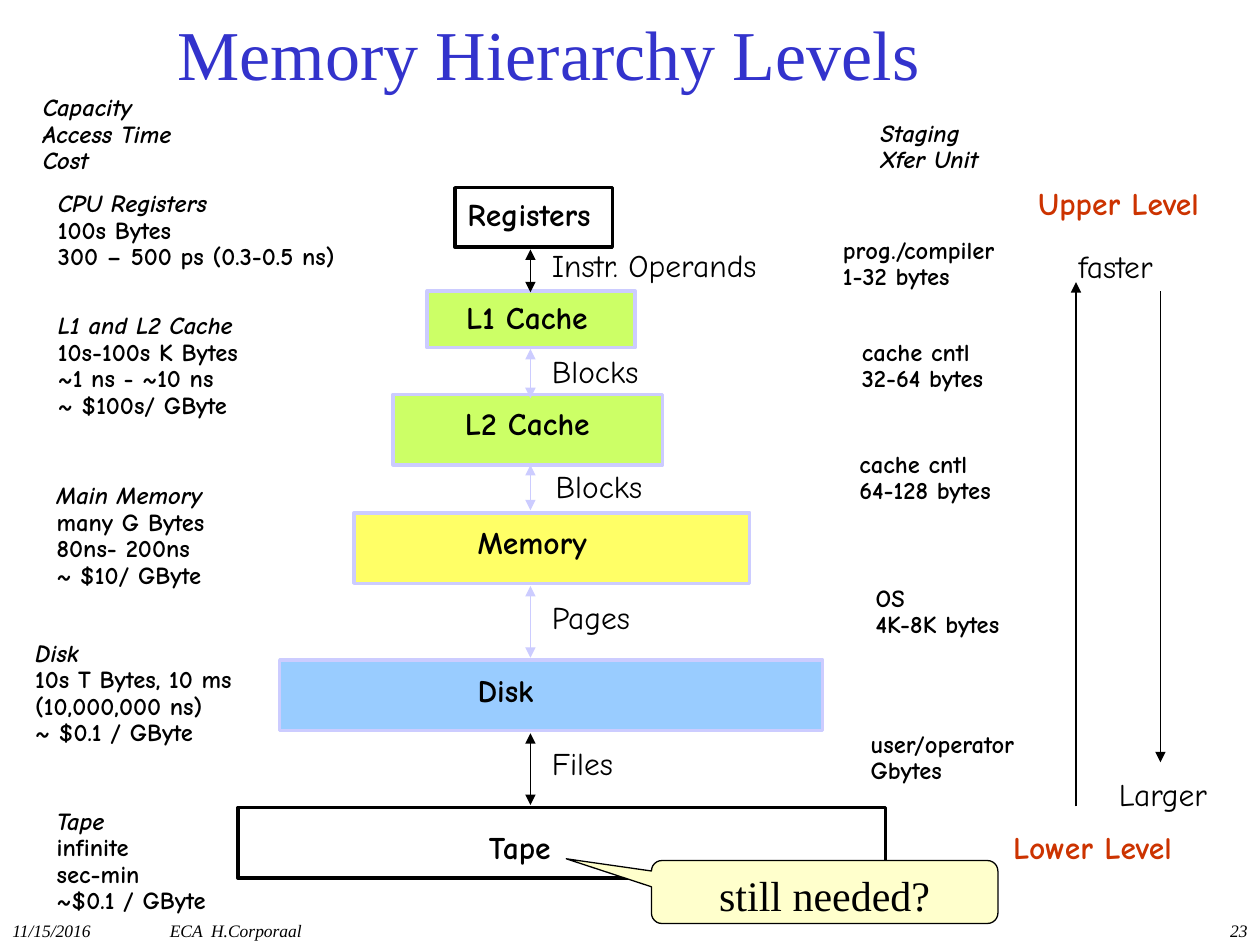
from lxml import etree
from pptx import Presentation
from pptx.dml.color import RGBColor
from pptx.enum.shapes import MSO_CONNECTOR, MSO_SHAPE
from pptx.enum.text import MSO_ANCHOR, MSO_AUTO_SIZE, PP_ALIGN
from pptx.oxml.ns import qn
from pptx.util import Inches, Pt

LEFT, CENTER, RIGHT = PP_ALIGN.LEFT, PP_ALIGN.CENTER, PP_ALIGN.RIGHT
MIDDLE = MSO_ANCHOR.MIDDLE
FIT_SHAPE = MSO_AUTO_SIZE.SHAPE_TO_FIT_TEXT
STRAIGHT = MSO_CONNECTOR.STRAIGHT
RECTANGLE = MSO_SHAPE.RECTANGLE
CALLOUT = MSO_SHAPE.ROUNDED_RECTANGULAR_CALLOUT

COMIC, TIMES = "Comic Neue", "Times New Roman"
BLACK, LILAC, RED, GREEN = "000000", "CCCCFF", "CC3300", "CCFF66"
AXIS_X = 4.21

# left, top, width, height, fill, outline
LEVEL_BOXES = [
    (3.61, 1.49, 1.25, 0.47, None, BLACK),
    (3.39, 2.31, 1.65, 0.45, GREEN, LILAC),
    (3.12, 3.13, 2.14, 0.56, GREEN, LILAC),
    (2.81, 4.07, 3.14, 0.56, "FFFF66", LILAC),
    (2.22, 5.24, 4.31, 0.56, "99CCFF", LILAC),
    (1.89, 6.41, 5.14, 0.56, None, BLACK),
]
# left, top, width, text
LEVEL_NAMES = [
    (3.64, 1.56, 1.26, "Registers"),
    (3.63, 2.38, 1.24, "L1 Cache"),
    (3.62, 3.22, 1.24, "L2 Cache"),
    (3.72, 4.17, 1.08, "Memory"),
    (3.72, 5.34, 0.65, "Disk"),
    (3.81, 6.59, 0.83, "Tape"),
]
TRANSFER_NAMES = [
    (4.31, 1.97, 2.02, "Instr. Operands"),
    (4.31, 2.81, 0.88, "Blocks"),
    (4.34, 3.72, 0.88, "Blocks"),
    (4.31, 4.76, 0.79, "Pages"),
    (4.31, 5.92, 0.69, "Files"),
]
TREND_NAMES = [(8.49, 1.98, 0.89, "faster"), (8.81, 6.17, 0.91, "Larger")]
END_NAMES = [(8.17, 1.48, 1.57, "Upper Level"), (7.97, 6.59, 1.55, "Lower Level")]
# top, bottom, colour
TRANSFER_ARROWS = [
    (1.98, 2.32, BLACK),
    (2.77, 3.16, LILAC),
    (3.69, 4.05, LILAC),
    (4.65, 5.22, LILAC),
    (5.82, 6.39, BLACK),
]
# left, top, width, height, lines, number of italic lines
NOTES = [
    (0.27, 0.73, 2.25, 0.69, ["Capacity", "Access Time", "Cost"], 3),
    (0.39, 1.49, 2.66, 0.69,
     ["CPU Registers", "100s Bytes", "300 – 500 ps (0.3-0.5 ns)"], 1),
    (0.39, 2.46, 1.85, 0.9,
     ["L1 and L2 Cache", "10s-100s K Bytes", "~1 ns - ~10 ns", "~ $100s/ GByte"], 1),
    (0.38, 3.81, 1.46, 0.9,
     ["Main Memory", "many G Bytes", "80ns- 200ns", "~ $10/ GByte"], 1),
    (0.21, 5.06, 2.13, 0.9,
     ["Disk", "10s T Bytes, 10 ms \v(10,000,000 ns)", "~ $0.1 / GByte"], 1),
    (0.38, 6.39, 1.55, 1.11, ["Tape", "infinite", "sec-min", "~$0.1 / GByte"], 1),
    (6.92, 0.93, 1.06, 0.48, ["Staging", "Xfer Unit"], 2),
    (6.62, 1.86, 1.51, 0.48, ["prog./compiler", "1-32 bytes"], 0),
    (6.77, 2.67, 1.34, 0.48, ["cache cntl", "32-64 bytes"], 0),
    (6.75, 3.56, 1.45, 0.48, ["cache cntl", "64-128 bytes"], 0),
    (6.88, 4.62, 1.34, 0.48, ["OS", "4K-8K bytes"], 0),
    (6.84, 5.78, 1.44, 0.48, ["user/operator", "Gbytes"], 0),
]
FOOTERS = [
    (0, 1.25, "11/15/2016", LEFT),
    (1.25, 3.17, "ECA  H.Corporaal", LEFT),
    (7.92, 2.08, "23", RIGHT),
]


def rgb(colour):
    return RGBColor.from_string(colour)


def style(para, name, size, colour, bold=False, italic=False):
    font = para.font
    font.name, font.size, font.bold, font.italic = name, Pt(size), bold, italic
    font.color.rgb = rgb(colour)


def add_text_box(page, left, top, width, height):
    box = page.shapes.add_textbox(*map(Inches, (left, top, width, height)))
    box.text_frame.word_wrap = True
    return box.text_frame


def add_tight_box(page, left, top, width, height):
    """Text frame with narrow margins that grows with unwrapped text."""
    frame = add_text_box(page, left, top, width, height)
    frame.word_wrap = False
    frame.auto_size = FIT_SHAPE
    frame.margin_left = frame.margin_right = Inches(0.07)
    frame.margin_top = frame.margin_bottom = Inches(0.03)
    return frame


def add_label(page, left, top, width, text, colour=BLACK, bold=False):
    para = add_tight_box(page, left, top, width, 0.31).paragraphs[0]
    para.text = text
    para.line_spacing = 0.85
    style(para, COMIC, 18, colour, bold)


def add_note(page, left, top, width, height, lines, italic_count):
    frame = add_tight_box(page, left, top, width, height)
    for index, line in enumerate(lines):
        para = frame.add_paragraph() if index else frame.paragraphs[0]
        para.text = line
        para.line_spacing = 0.9
        style(para, COMIC, 14, BLACK, True, index < italic_count)


def add_block(page, kind, left, top, width, height, fill, outline, weight):
    block = page.shapes.add_shape(kind, *map(Inches, (left, top, width, height)))
    block.shadow.inherit = False
    if fill:
        block.fill.solid()
        block.fill.fore_color.rgb = rgb(fill)
    else:
        block.fill.background()
    block.line.color.rgb = rgb(outline)
    block.line.width = Pt(weight)
    return block


def add_arrow(page, x, start, end, colour=BLACK, ends=("tailEnd",)):
    arrow = page.shapes.add_connector(STRAIGHT, *map(Inches, (x, start, x, end)))
    arrow.line.color.rgb = rgb(colour)
    arrow.line.width = Pt(1)
    outline = arrow.line._get_or_add_ln()
    for tag in ends:
        etree.SubElement(outline, qn("a:" + tag), type="triangle")
    etree.SubElement(arrow._element.spPr, qn("a:effectLst"))


def add_title(page, text):
    title = page.shapes.title
    title.left, title.top, title.width, title.height = map(
        Inches, (1.31, 0.19, 7.08, 0.45))
    title.text_frame.text = text
    title.text_frame.vertical_anchor = MIDDLE
    para = title.text_frame.paragraphs[0]
    para.alignment = LEFT
    style(para, TIMES, 40, "3333CC")


def add_callout(page, text):
    callout = add_block(page, CALLOUT, 5.17, 6.83, 2.75, 0.5, "FFFFCC", BLACK, 0.75)
    for index, value in enumerate((-0.746, -0.528, 0.167)):
        callout.adjustments[index] = value
    frame = callout.text_frame
    frame.text = text
    frame.vertical_anchor = MSO_ANCHOR.TOP
    para = frame.paragraphs[0]
    para.alignment = CENTER
    style(para, TIMES, 24, BLACK)


def main():
    deck = Presentation()
    deck.slide_width, deck.slide_height = Inches(10), Inches(7.5)
    page = deck.slides.add_slide(deck.slide_layouts[5])
    add_title(page, "Memory Hierarchy Levels")

    # Footer line
    for left, width, text, alignment in FOOTERS:
        para = add_text_box(page, left, 7.25, width, 0.25).paragraphs[0]
        para.text = text
        para.alignment = alignment
        style(para, TIMES, 10, BLACK, italic=True)

    # Pyramid of levels and the transfers between them
    for box in LEVEL_BOXES:
        add_block(page, RECTANGLE, *box, 2)
    for label in LEVEL_NAMES:
        add_label(page, *label, bold=True)
    for top, bottom, colour in TRANSFER_ARROWS:
        add_arrow(page, AXIS_X, top, bottom, colour, ("headEnd", "tailEnd"))
    for label in TRANSFER_NAMES + TREND_NAMES:
        add_label(page, *label)

    # Side notes
    for note in NOTES:
        add_note(page, *note)

    # Speed and size trends
    for label in END_NAMES:
        add_label(page, *label, colour=RED, bold=True)
    add_arrow(page, 8.54, 6.4, 2.24)
    add_arrow(page, 9.21, 2.31, 6.05)

    add_callout(page, "still needed?")
    deck.save("out.pptx")


if __name__ == "__main__":
    main()
